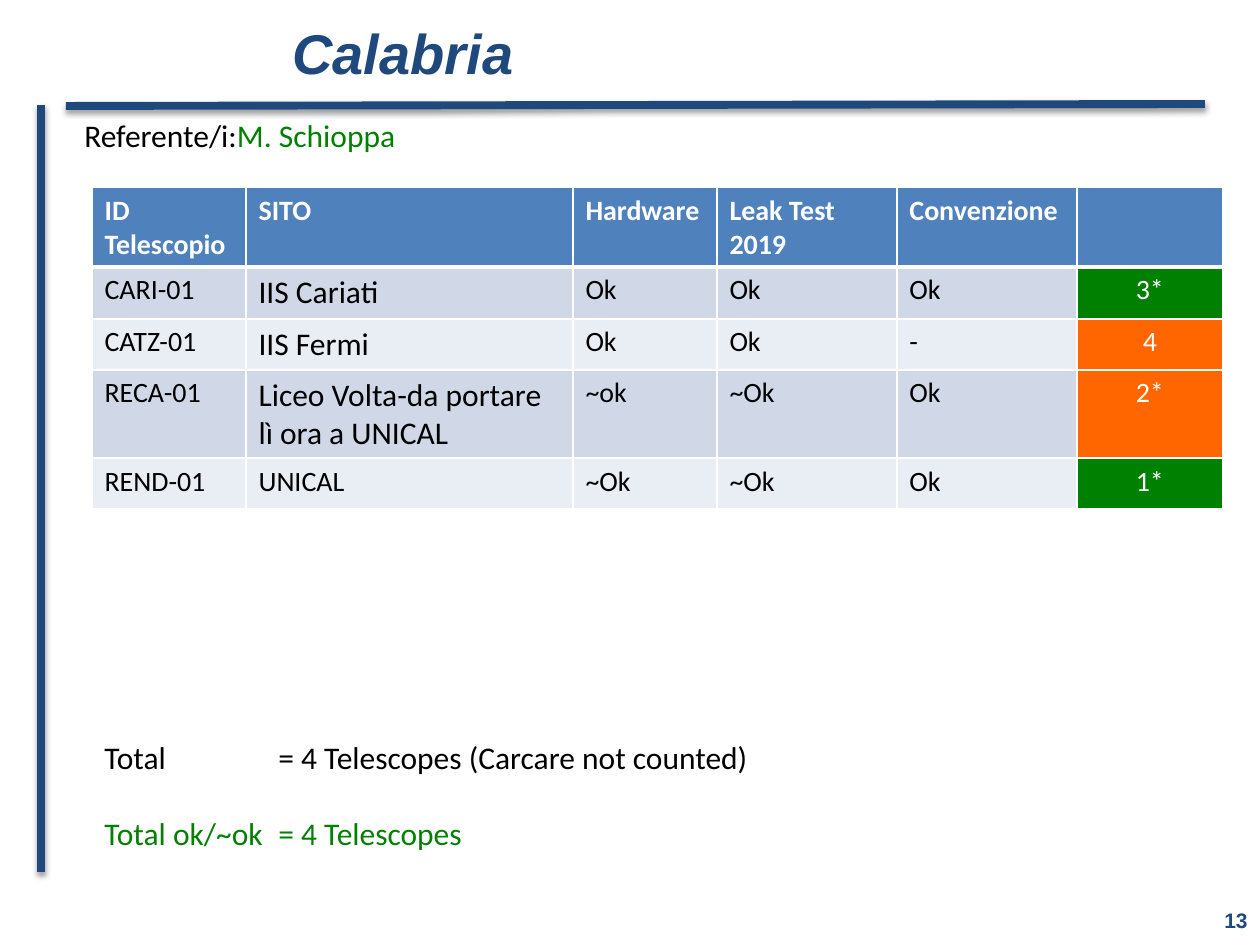
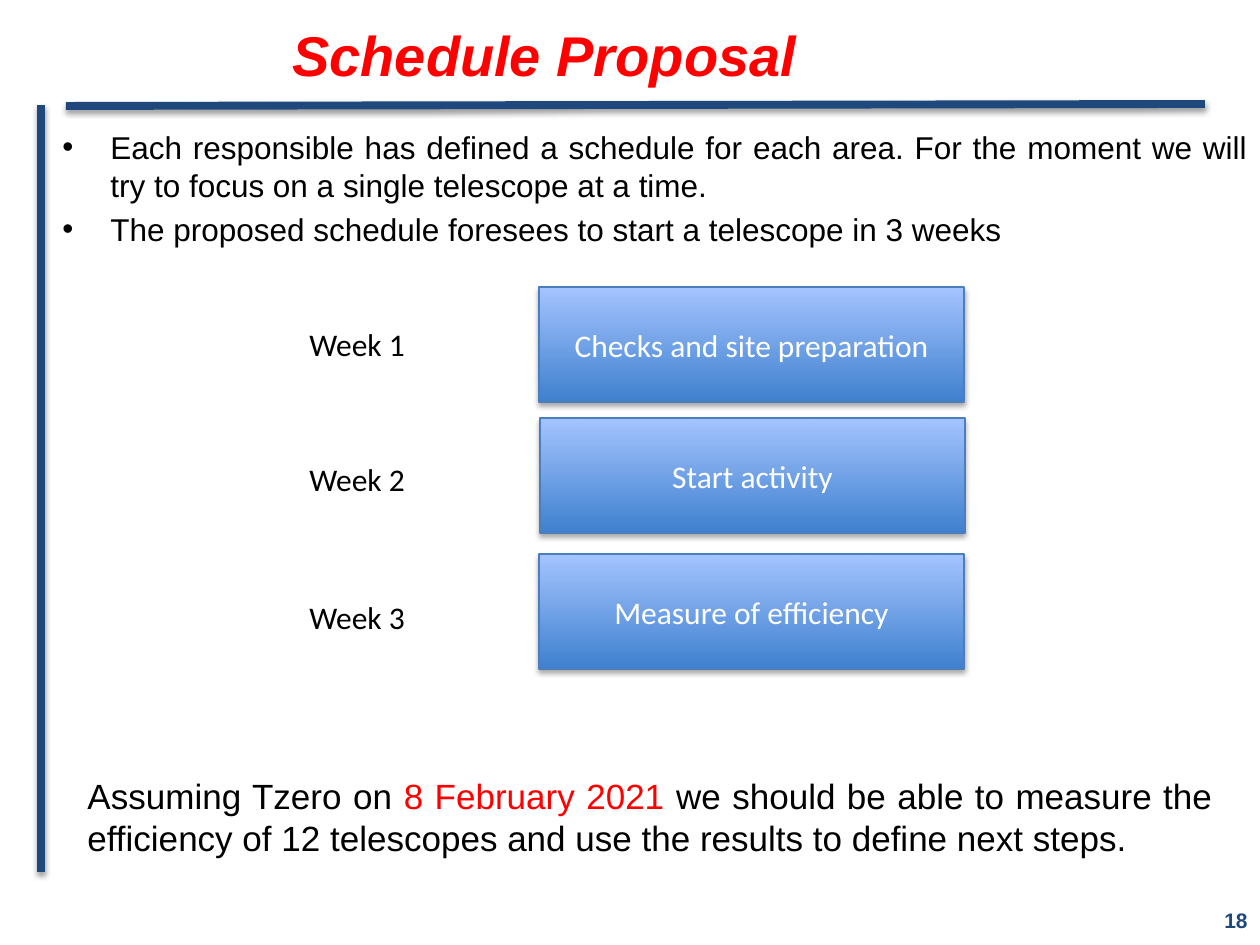
import pptx
import pptx.util
import pptx.dml.color
import pptx.enum.shapes
import pptx.enum.text
import pptx.oxml
import pptx.oxml.ns

NAVY, BLACK, WHITE = "1F497D", "000000", "FFFFFF"
GREEN, ORANGE, RED = "008000", "FF6600", "FF0000"
HEADER_BLUE, BANDS = "4F81BD", ("D0D8E8", "E9EDF4")
ALIGN = pptx.enum.text.PP_ALIGN
ANCHOR = pptx.enum.text.MSO_ANCHOR

TITLE = {"name": "Arial", "size": 32, "bold": True, "italic": True}
NUMBER = {"name": "Arial", "size": 12, "bold": True, "color": NAVY}
PLAIN = {"name": "Calibri", "size": 18, "color": BLACK}
CELL = {"name": "Calibri", "size": 16, "bold": False, "color": BLACK}
BODY = {"name": "Arial", "size": 18, "color": BLACK}
CLOSING = {"name": "Arial", "size": 20, "color": BLACK}

COLUMN_WIDTHS = (154, 327, 144, 180, 180, 146)
ROW_HEIGHTS = (78, 52, 51, 88, 51)
HEADINGS = ("ID Telescopio", "SITO", "Hardware", "Leak Test 2019", "Convenzione", "")
TELESCOPES = (
    ("CARI-01", "IIS Cariati", "Ok", "Ok", "Ok", "3*"),
    ("CATZ-01", "IIS Fermi", "Ok", "Ok", "-", "4"),
    ("RECA-01", "Liceo Volta-da portare lì ora a UNICAL", "~ok", "~Ok", "Ok", "2*"),
    ("REND-01", "UNICAL", "~Ok", "~Ok", "Ok", "1*"),
)
STATUS_FILLS = (GREEN, ORANGE, ORANGE, GREEN)
SITE_SIZES = (18, 18, 18, 16)

WEEKS = (
    ("Week 1", 32, "Checks and site preparation", 242, 0),
    ("Week 2", 167, "Start activity", 243, 131),
    ("Week 3", 305, "Measure of efficiency", 242, 267),
)


def px(length):
    return pptx.util.Emu(round(length * 914400 / 126))


def rgb(color):
    return pptx.dml.color.RGBColor.from_string(color)


def apply_format(target, values):
    for name, value in values.items():
        setattr(target, name, value)


def add_element(parent, xml):
    tag, rest = xml.split(" ", 1)
    parent.append(pptx.oxml.parse_xml(f"<a:{tag} {pptx.oxml.ns.nsdecls('a')} {rest}"))


def add_shadow(shape, opacity, distance):
    add_element(
        shape._element.spPr,
        'effectLst ><a:outerShdw blurRad="39370" '
        f'dist="{pptx.util.Pt(distance)}" dir="5400000" rotWithShape="0">'
        f'<a:srgbClr val="{BLACK}"><a:alpha val="{opacity * 1000}"/></a:srgbClr>'
        "</a:outerShdw></a:effectLst>",
    )


def write(para, spans, style, **paragraph_format):
    apply_format(para, paragraph_format)
    for text, changes in spans:
        span = para.add_run()
        span.text = text
        values = {**style, **changes}
        span.font.color.rgb = rgb(values.pop("color"))
        values["size"] = pptx.util.Pt(values["size"])
        apply_format(span.font, values)


def add_text(page, box, spans=(), style=PLAIN, wrap=True, anchor=ANCHOR.TOP, **paragraph_format):
    frame = page.shapes.add_textbox(*map(px, box)).text_frame
    apply_format(frame, {"word_wrap": wrap, "vertical_anchor": anchor})
    if spans:
        write(frame.paragraphs[0], spans, style, **paragraph_format)
    return frame


def add_rule(page, start, end):
    rule = page.shapes.add_connector(
        pptx.enum.shapes.MSO_CONNECTOR.STRAIGHT, *map(px, start + end))
    rule.line.color.rgb = rgb(NAVY)
    rule.line.width = pptx.util.Pt(4.5)
    add_shadow(rule, 38, 1.6)


def add_page(deck, title, color, title_top, number):
    page = deck.slides.add_slide(deck.slide_layouts[6])
    add_rule(page, (66, 106), (1205, 104))
    add_rule(page, (41, 105), (41, 872))
    add_text(page, (280, title_top, 895, 105), [(title, {"color": color})], TITLE,
             anchor=ANCHOR.MIDDLE)
    add_text(page, (966, 895, 294, 50), [(number, {})], NUMBER,
             anchor=ANCHOR.MIDDLE, alignment=ALIGN.RIGHT)
    return page


def fill_cell(cell, text, fill, style, top=1, bottom=1, align=ALIGN.LEFT):
    properties = cell._tc.get_or_add_tcPr()
    for side, width in (("L", 1), ("R", 1), ("T", top), ("B", bottom)):
        add_element(
            properties,
            f'ln{side} w="{pptx.util.Pt(width)}"><a:solidFill>'
            f'<a:srgbClr val="{WHITE}"/></a:solidFill></a:ln{side}>',
        )
    cell.fill.solid()
    cell.fill.fore_color.rgb = rgb(fill)
    if text:
        write(cell.text_frame.paragraphs[0], [(text, {})], style, alignment=align)


def add_telescope_table(page, left, top):
    box = (left, top, sum(COLUMN_WIDTHS), sum(ROW_HEIGHTS))
    table = page.shapes.add_table(
        len(ROW_HEIGHTS), len(COLUMN_WIDTHS), *map(px, box)).table
    for column, width in zip(table.columns, COLUMN_WIDTHS):
        column.width = px(width)
    for row, height in zip(table.rows, ROW_HEIGHTS):
        row.height = px(height)
    for column, heading in enumerate(HEADINGS):
        fill_cell(table.cell(0, column), heading, HEADER_BLUE,
                  {**CELL, "bold": True, "color": WHITE}, bottom=3)
    for row, telescope in enumerate(TELESCOPES):
        top_border = 1 if row else 3
        for column, text in enumerate(telescope[:-1]):
            size = SITE_SIZES[row] if column == 1 else 16
            fill_cell(table.cell(row + 1, column), text, BANDS[row % 2],
                      {**CELL, "size": size}, top=top_border)
        fill_cell(table.cell(row + 1, len(telescope) - 1), telescope[-1],
                  STATUS_FILLS[row], {**CELL, "color": WHITE},
                  top=top_border, align=ALIGN.CENTER)


def add_totals(page, box):
    frame = add_text(page, box)
    totals = (
        ("Total\t= 4 Telescopes (Carcare not counted)", BLACK, 0),
        ("Total ok/~ok\t= 4 Telescopes", GREEN, 22),
    )
    for index, (text, color, gap) in enumerate(totals):
        para = frame.add_paragraph() if index else frame.paragraphs[0]
        add_element(para._p.get_or_add_pPr(),
                    f'tabLst ><a:tab pos="{px(174)}" algn="l"/></a:tabLst>')
        write(para, [(text, {"color": color})], PLAIN, space_before=pptx.util.Pt(gap))


def add_bullets(page, box, texts):
    frame = add_text(page, box)
    for index, text in enumerate(texts):
        para = frame.add_paragraph() if index else frame.paragraphs[0]
        properties = para._p.get_or_add_pPr()
        properties.set("marL", str(px(48)))
        properties.set("indent", str(-px(48)))
        add_element(properties, 'buFont typeface="Arial"/>')
        add_element(properties, 'buChar char="•"/>')
        write(para, [(text, {})], BODY, alignment=ALIGN.JUSTIFY,
              space_before=pptx.util.Pt(3.6 if index else 0))


def add_activity(page, box, text):
    activity = page.shapes.add_shape(
        pptx.enum.shapes.MSO_SHAPE.RECTANGLE, *map(px, box))
    activity.fill.gradient()
    activity.fill.gradient_angle = 90
    for stop, color, position in zip(
            activity.fill.gradient_stops, ("3F80CE", "A4C4FF"), (0, 1)):
        stop.color.rgb = rgb(color)
        stop.position = position
    activity.line.color.rgb = rgb("4B7EBC")
    activity.line.width = pptx.util.Pt(0.75)
    add_shadow(activity, 35, 1.8)
    frame = activity.text_frame
    apply_format(frame, {"word_wrap": True, "vertical_anchor": ANCHOR.MIDDLE})
    write(frame.paragraphs[0], [(text, {"color": WHITE})], PLAIN, alignment=ALIGN.CENTER)


def add_weeks(page, left, top):
    for label, label_top, activity, activity_left, activity_top in WEEKS:
        add_activity(page, (left + activity_left, top + activity_top, 425, 115), activity)
        add_text(page, (left, top + label_top, 123, 50), [(label, {})], wrap=False)


def build_calabria(deck):
    page = add_page(deck, "Calabria", NAVY, 0, "13")
    add_text(page, (72, 110, 883, 50),
             [("Referente/i:", {}), ("M. Schioppa", {"color": GREEN})])
    add_telescope_table(page, 92, 187)
    add_totals(page, (92, 732, 730, 127))


def build_schedule(deck):
    page = add_page(deck, "Schedule Proposal", RED, 2, "18")
    add_bullets(page, (50, 122, 1210, 171), (
        "Each responsible has defined a schedule for each area. For the moment "
        "we will try to focus on a single telescope at a time.",
        "The proposed schedule foresees to start a telescope in 3 weeks",
    ))
    add_weeks(page, 297, 287)
    add_text(page, (75, 768, 1150, 97), [
        ("Assuming Tzero on ", {}),
        ("8 February 2021 ", {"color": RED}),
        ("we should be able to measure the efficiency of 12 telescopes and use "
         "the results to define next steps.", {}),
    ], CLOSING, alignment=ALIGN.JUSTIFY)


def main():
    deck = pptx.Presentation()
    apply_format(deck, {"slide_width": px(1260), "slide_height": px(945)})
    build_calabria(deck)
    build_schedule(deck)
    deck.save("out.pptx")


if __name__ == "__main__":
    main()
